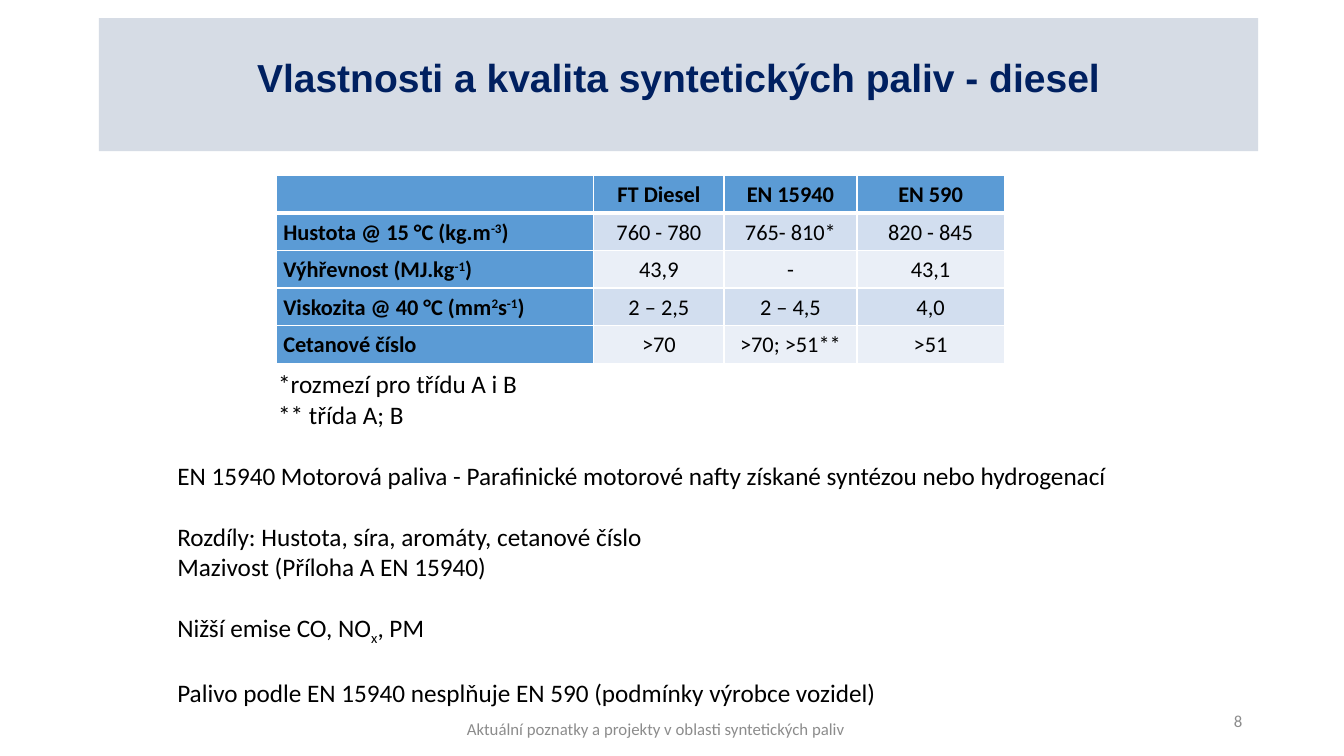
from dataclasses import dataclass
from typing import NamedTuple

from lxml import etree
from pptx import Presentation
from pptx import util as u
from pptx.dml.color import RGBColor
from pptx.enum import shapes, text
from pptx.oxml import ns

NAVY = RGBColor(0x00, 0x20, 0x60)
BLACK = RGBColor(0x00, 0x00, 0x00)
WHITE = RGBColor(0xFF, 0xFF, 0xFF)
GREY = RGBColor(0x8C, 0x8C, 0x8C)
BANNER = RGBColor(0xD6, 0xDC, 0xE5)
HEAD_BLUE = RGBColor(0x5B, 0x9B, 0xD5)
BANDS = (RGBColor(0xD2, 0xDE, 0xEF), RGBColor(0xEA, 0xEF, 0xF7))

LEFT, CENTER, RIGHT = text.PP_ALIGN.LEFT, text.PP_ALIGN.CENTER, text.PP_ALIGN.RIGHT
TOP, MIDDLE = text.MSO_ANCHOR.TOP, text.MSO_ANCHOR.MIDDLE
SUPER, SUB = 30, -25  # baseline shift in percent


class Run(NamedTuple):
    text: str
    shift: int = 0


@dataclass
class Para:
    runs: list[Run]
    gap: float = 0     # points above
    indent: float = 0  # inches


@dataclass
class Box:
    left: float
    top: float
    width: float
    height: float
    paras: list[Para]
    size: float
    color: RGBColor
    align: text.PP_ALIGN = LEFT
    anchor: text.MSO_ANCHOR = TOP


def set_all(obj, values: dict) -> None:
    for name, value in values.items():
        setattr(obj, name, value)


def add_runs(p, runs: list[Run], color: RGBColor, fmt: dict) -> None:
    for run in runs:
        r = p.add_run()
        r.text = run.text
        set_all(r.font, fmt)
        r.font.color.rgb = color
        if run.shift:
            r.font._element.set("baseline", str(run.shift * 1000))


def add_box(s, box: Box) -> None:
    sp = s.shapes.add_textbox(*map(u.Inches, (box.left, box.top, box.width, box.height)))
    tf = sp.text_frame
    set_all(tf, {"word_wrap": True, "vertical_anchor": box.anchor})
    for i, para in enumerate(box.paras):
        p = tf.add_paragraph() if i else tf.paragraphs[0]
        set_all(p, {"alignment": box.align, "space_before": u.Pt(para.gap)})
        if para.indent:
            p._p.get_or_add_pPr().set("marL", str(u.Inches(para.indent)))
        add_runs(p, para.runs, box.color, {"name": "Calibri", "size": u.Pt(box.size)})


def add_banner(s, title: str) -> None:
    sp = s.shapes.add_shape(shapes.MSO_SHAPE.RECTANGLE,
                            *map(u.Inches, (0.98, 0.18, 11.5, 1.32)))
    sp.shadow.inherit = False
    sp.fill.solid()
    sp.fill.fore_color.rgb = BANNER
    sp.line.fill.background()
    tf = sp.text_frame
    set_all(tf, {"word_wrap": True, "vertical_anchor": MIDDLE, "margin_bottom": u.Inches(0.2)})
    p = tf.paragraphs[0]
    p.alignment = CENTER
    add_runs(p, [Run(title)], NAVY, {"name": "Arial", "size": u.Pt(27.9), "bold": True})


def add_border(cell, side: str, width: float) -> None:
    tc_pr = cell._tc.get_or_add_tcPr()
    ln = etree.SubElement(tc_pr, ns.qn(f"a:ln{side}"), w=str(u.Pt(width)))
    fill = etree.SubElement(ln, ns.qn("a:solidFill"))
    etree.SubElement(fill, ns.qn("a:srgbClr"), val=str(WHITE))


def add_fuel_table(s, rows: list[list[list[Run]]], widths: list[float]) -> None:
    row_height = u.Inches(0.37)
    table = s.shapes.add_table(len(rows), len(widths), u.Inches(2.74), u.Inches(1.74),
                               u.Inches(sum(widths)), row_height * len(rows)).table
    for column, width in zip(table.columns, widths):
        column.width = u.Inches(width)
    for i, row in enumerate(rows):
        table.rows[i].height = u.Inches(0.3725)
        for j, runs in enumerate(row):
            cell = table.cell(i, j)
            heading = i == 0 or j == 0
            set_all(cell, {"vertical_anchor": MIDDLE, "margin_top": 0, "margin_bottom": 0,
                           "margin_left": u.Inches(0.07), "margin_right": u.Inches(0.07)})
            # A thick rule separates the header from the values
            for side, thick_row in (("L", None), ("R", None), ("T", 1), ("B", 0)):
                add_border(cell, side, 3 if i == thick_row else 1)
            cell.fill.solid()
            cell.fill.fore_color.rgb = HEAD_BLUE if heading else BANDS[(i - 1) % 2]
            p = cell.text_frame.paragraphs[0]
            set_all(p, {"alignment": CENTER if j else LEFT, "line_spacing": 1.07})
            add_runs(p, runs, BLACK, {"name": "Calibri", "size": u.Pt(16), "bold": heading})


# Content
FUEL_ROWS = [
    ([], "FT Diesel", "EN 15940", "EN 590"),
    ([Run("Hustota @ 15 °C (kg.m"), Run("-3", SUPER), Run(")")],
     "760 - 780", "765- 810*", "820 - 845"),
    ([Run("Výhřevnost (MJ.kg"), Run("-1", SUPER), Run(")")], "43,9", "-", "43,1"),
    ([Run("Viskozita @ 40 °C (mm"), Run("2", SUPER), Run("s"), Run("-1", SUPER), Run(")")],
     "2 – 2,5", "2 – 4,5", "4,0"),
    ([Run("Cetanové číslo")], ">70", ">70; >51**", ">51"),
]
LINE = 22  # height of one body line, points
NOTES = [
    Para([Run("*rozmezí pro třídu A i B")], indent=1),
    Para([Run("** třída A; B")], indent=1),
    Para([Run("EN 15940 Motorová paliva - Parafinické motorové nafty získané "
              "syntézou nebo hydrogenací")], LINE),
    Para([Run("Rozdíly: Hustota, síra, aromáty, cetanové číslo")], LINE),
    Para([Run("Mazivost (Příloha A EN 15940)")]),
    Para([Run("Nižší emise CO, NO"), Run("x", SUB), Run(", PM")], LINE),
    Para([Run("Palivo podle EN 15940 nesplňuje EN 590 (podmínky výrobce vozidel)")], LINE),
]
FOOTER = [Para([Run("Aktuální poznatky a projekty v oblasti syntetických paliv")])]
BOXES = [
    Box(9.42, 6.95, 3, 0.4, [Para([Run("8")])], 12, GREY, RIGHT, MIDDLE),
    Box(1.66, 3.61, 9.55, 3.43, NOTES, 18, BLACK),
    Box(3.6, 7.03, 5.81, 0.4, FOOTER, 12, GREY, CENTER, MIDDLE),
]


def main() -> None:
    prs = Presentation()
    set_all(prs, {"slide_width": u.Inches(13.33), "slide_height": u.Inches(7.5)})
    s = prs.slides.add_slide(prs.slide_layouts[6])
    add_banner(s, "Vlastnosti a kvalita syntetických paliv - diesel")
    rows = [[label, *([Run(value)] for value in values)] for label, *values in FUEL_ROWS]
    add_fuel_table(s, rows, [3.15, 1.29, 1.32, 1.46])
    for box in BOXES:
        add_box(s, box)
    prs.save("out.pptx")


if __name__ == "__main__":
    main()
